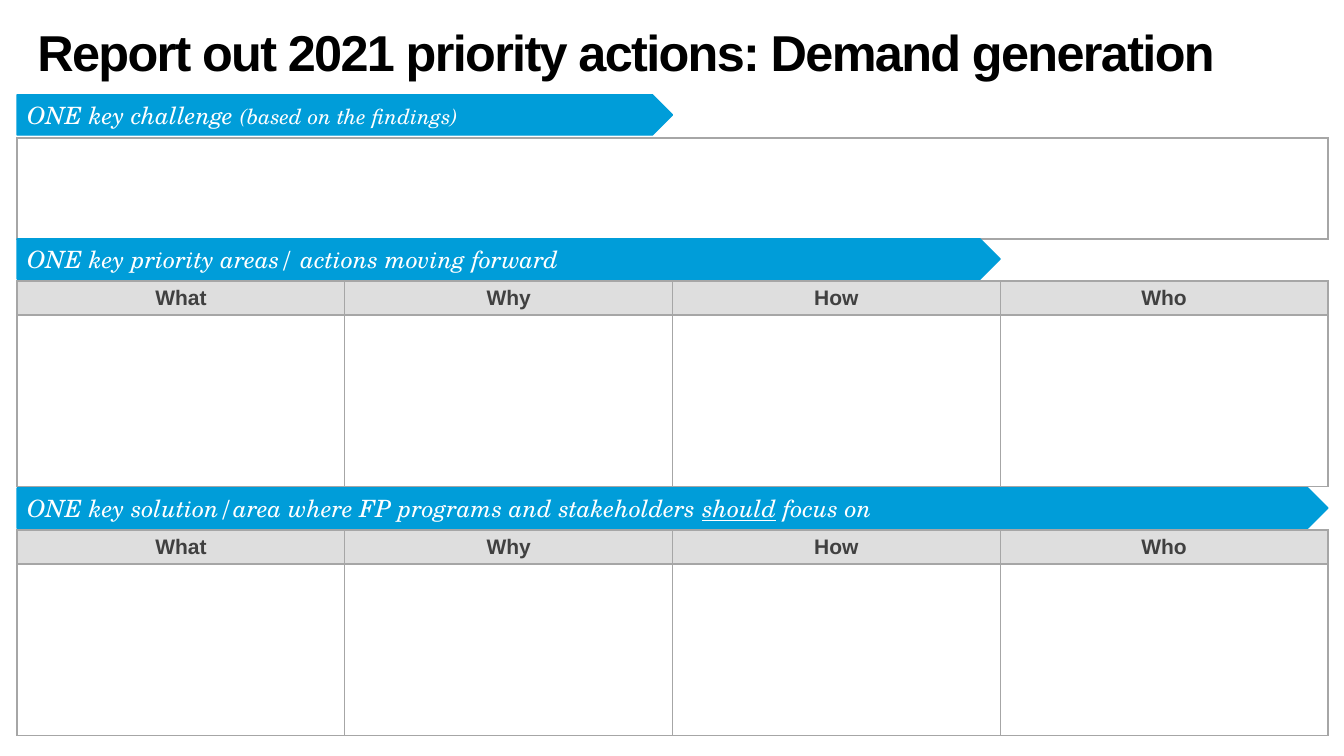
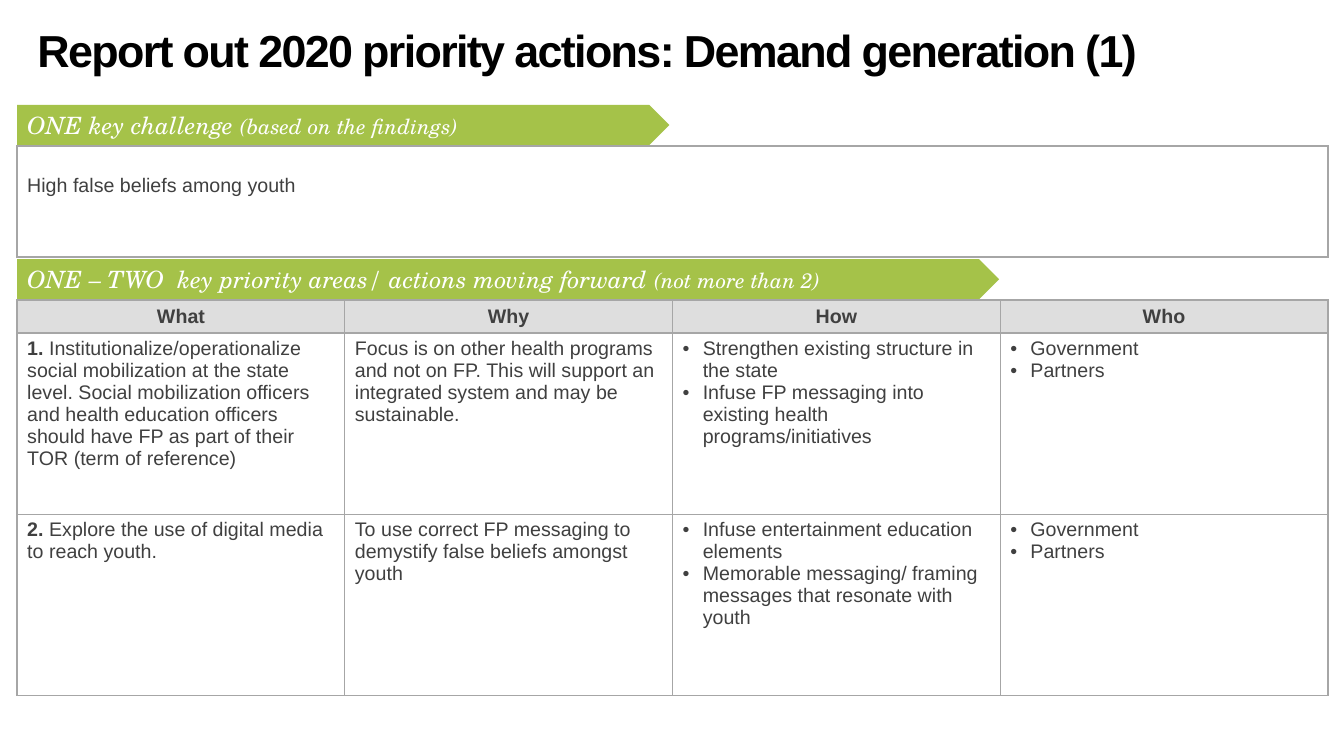
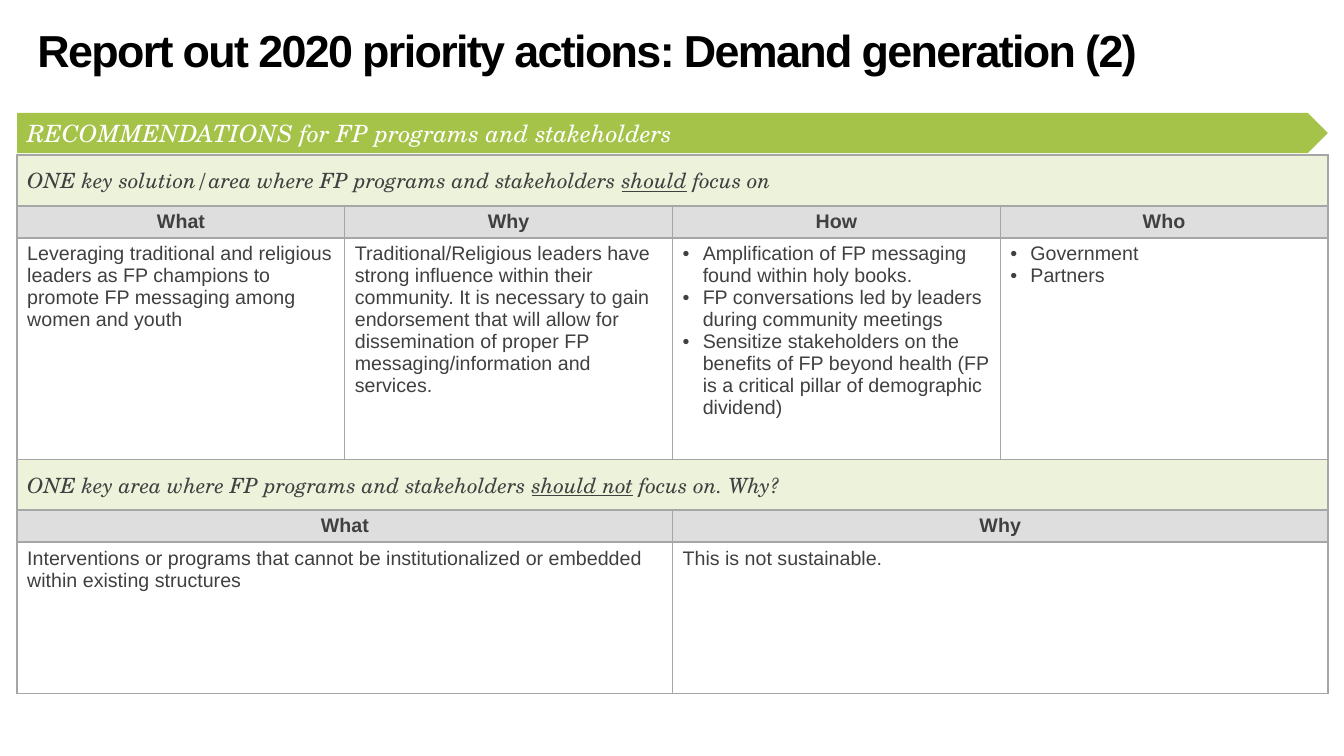
from lxml import etree
from pptx import Presentation
from pptx.dml.color import RGBColor
from pptx.enum.shapes import MSO_SHAPE
from pptx.enum.text import MSO_ANCHOR, MSO_AUTO_SIZE, PP_ALIGN
from pptx.oxml.ns import qn
from pptx.util import Inches, Pt

# Shared look
BLACK = RGBColor(0x00, 0x00, 0x00)
WHITE = RGBColor(0xFF, 0xFF, 0xFF)
DARK = RGBColor(0x40, 0x40, 0x40)
BLUE = RGBColor(0x00, 0x9D, 0xD9)
GREEN = RGBColor(0xA5, 0xC2, 0x49)
PALE_GREEN = RGBColor(0xED, 0xF3, 0xDB)
GREY = RGBColor(0xDE, 0xDE, 0xDE)
EDGE = RGBColor(0xA6, 0xA6, 0xA6)
SANS, SERIF = "Arial", "TeX Gyre Schola"
LEFT, WIDTH, BAND_H = 0.17, 13, 0.4
THICK, THIN = 1.5, 0.75

BANNER = dict(size=Pt(17), name=SERIF, color=WHITE, italic=True)
SUBBAND = dict(size=Pt(15), name=SERIF, color=DARK, italic=True)
BODY = dict(size=Pt(14), name=SANS, color=DARK)
SMALL = dict(size=Pt(15))
UNDER = dict(underline=True)
BOLD = dict(bold=True)

# Wording used more than once
HEADS = ["What", "Why", "How", "Who"]
CHALLENGE = ["ONE key challenge ", ("(based on the findings)", SMALL)]
SOLUTION = ["ONE key solution/area where FP programs and stakeholders ",
            ("should", UNDER), " focus on"]
PARTNERS = ("Government", "Partners")


def write_runs(p, runs, style):
    """Runs are plain strings or (string, changed format) pairs."""
    for run in [runs] if isinstance(runs, str) else runs:
        text, change = (run, {}) if isinstance(run, str) else run
        r = p.add_run()
        r.text = text
        for key, value in {**style, **change}.items():
            if key == "color":
                r.font.color.rgb = value
            else:
                setattr(r.font, key, value)


def add_bullet(p):
    pPr = p._p.get_or_add_pPr()
    pPr.set("marL", str(Inches(0.2)))
    pPr.set("indent", str(-Inches(0.2)))
    etree.SubElement(pPr, qn("a:buFont"), typeface=SANS)
    etree.SubElement(pPr, qn("a:buChar"), char="•")


def set_borders(cell, **weights):
    tcPr = cell._tc.get_or_add_tcPr()
    for side in "LRTB":
        ln = etree.SubElement(tcPr, qn("a:ln" + side), w=str(Pt(weights[side])))
        fill = etree.SubElement(ln, qn("a:solidFill"))
        etree.SubElement(fill, qn("a:srgbClr"), val=str(EDGE))


def add_title_slide(prs, title, size, top, height):
    s = prs.slides.add_slide(prs.slide_layouts[5])
    sp = s.shapes.title
    sp.left, sp.top = Inches(0.27), Inches(top)
    sp.width, sp.height = Inches(12.8), Inches(height)
    tf = sp.text_frame
    tf.auto_size, tf.word_wrap = MSO_AUTO_SIZE.NONE, True
    tf.vertical_anchor = MSO_ANCHOR.TOP
    p = tf.paragraphs[0]
    p.alignment, p.line_spacing = PP_ALIGN.LEFT, 0.9
    write_runs(p, title, dict(size=Pt(size), name=SANS, color=BLACK, bold=True))
    p.runs[0]._r.get_or_add_rPr().set("spc", "-120")
    return s


def add_banner(s, top, width, runs, color, outlined=False):
    sp = s.shapes.add_shape(MSO_SHAPE.PENTAGON, Inches(LEFT), Inches(top),
                            Inches(width), Inches(BAND_H))
    sp.shadow.inherit = False
    sp.fill.solid()
    sp.fill.fore_color.rgb = color
    if outlined:
        sp.line.color.rgb, sp.line.width = color, Pt(1)
    else:
        sp.line.fill.background()
    tf = sp.text_frame
    tf.word_wrap, tf.vertical_anchor = True, MSO_ANCHOR.MIDDLE
    tf.paragraphs[0].alignment = PP_ALIGN.LEFT
    write_runs(tf.paragraphs[0], runs, BANNER)


def fill_cell(cell, kind, content, head_size):
    """A tuple gives bullets, anything else a single paragraph of runs."""
    color = {"band": PALE_GREEN, "head": GREY}.get(kind)
    if color is None:
        cell.fill.background()
    else:
        cell.fill.solid()
        cell.fill.fore_color.rgb = color
        cell.vertical_anchor = MSO_ANCHOR.MIDDLE
    style = {"band": SUBBAND, "body": BODY,
             "head": {**BODY, **BOLD, "size": Pt(head_size)}}[kind]
    bulleted = isinstance(content, tuple)
    tf = cell.text_frame
    for i, runs in enumerate(content if bulleted else [content]):
        p = tf.add_paragraph() if i else tf.paragraphs[0]
        if bulleted:
            add_bullet(p)
        if kind == "head":
            p.alignment = PP_ALIGN.CENTER
        if runs:
            write_runs(p, runs, style)


def add_grid(s, top, rows, cols=4, head_size=14, foot=THICK):
    """Rows are (kind, height, contents); contents share the columns equally."""
    height = sum(row[1] for row in rows)
    table = s.shapes.add_table(len(rows), cols, Inches(LEFT), Inches(top),
                               Inches(WIDTH), Inches(height)).table
    table.first_row = table.horz_banding = False
    for col in table.columns:
        col.width = Inches(WIDTH / cols)
    rules = [THICK] + [THIN if kind == "body" else THICK for kind, _, _ in rows]
    rules[-1] = foot
    for y, (kind, row_height, contents) in enumerate(rows):
        table.rows[y].height = Inches(row_height)
        span = cols // len(contents)
        for i, content in enumerate(contents):
            x = i * span
            cell = table.cell(y, x)
            if span > 1:
                cell.merge(table.cell(y, x + span - 1))
            set_borders(cell, L=THIN if x else THICK,
                        R=THIN if x + span < cols else THICK,
                        T=rules[y], B=rules[y + 1])
            fill_cell(cell, kind, content, head_size)
    return table


def build_blank_form(prs):
    s = add_title_slide(prs, "Report out 2021 priority actions: Demand generation",
                        36, 0.23, 0.65)
    add_grid(s, 1.37, [("body", 1, [""])], cols=1)
    for top in (2.79, 5.26):
        add_grid(s, top, [("head", 0.33, HEADS), ("body", 1.7, [""] * 4)],
                 head_size=15, foot=THIN)
    for top, width, runs in (
            (0.94, 6.5, CHALLENGE),
            (2.37, 9.75, "ONE key priority areas/ actions moving forward"),
            (4.84, WIDTH, SOLUTION)):
        add_banner(s, top, width, runs, BLUE, outlined=True)


def build_priorities(prs):
    s = add_title_slide(prs, "Report out 2020 priority actions: Demand generation (1)",
                        32, 0.24, 0.7)
    add_banner(s, 1.04, 6.47, CHALLENGE, GREEN)
    box = add_grid(s, 1.45, [("body", 1.1, ["High false beliefs among youth"])], cols=1)
    box.cell(0, 0).margin_top = Inches(0.28)
    add_banner(s, 2.57, 9.74,
               ["ONE – TWO  key priority areas/ actions moving forward ",
                ("(not more than 2)", SMALL)], GREEN)
    add_grid(s, 2.98, [
        ("head", 0.32, HEADS),
        ("body", 1.8, [
            [("1.", BOLD), " Institutionalize/operationalize social mobilization at the "
             "state level. Social mobilization officers and health education officers "
             "should have FP as part of their TOR (term of reference)"],
            "Focus is on other health programs and not on FP. This will support an "
            "integrated system and may be sustainable.",
            ("Strengthen existing structure in the state",
             "Infuse FP messaging into existing health programs/initiatives"),
            PARTNERS]),
        ("body", 1.8, [
            [("2. ", BOLD), "Explore the use of digital media to reach youth."],
            "To use correct FP messaging to demystify false beliefs amongst youth",
            ("Infuse entertainment education elements",
             "Memorable messaging/ framing messages that resonate with youth"),
            PARTNERS]),
    ])


def build_recommendations(prs):
    s = add_title_slide(prs, "Report out 2020 priority actions: Demand generation (2)",
                        32, 0.24, 0.7)
    add_banner(s, 1.12, WIDTH, "RECOMMENDATIONS for FP programs and stakeholders", GREEN)
    add_grid(s, 1.54, [
        ("band", 0.5, [SOLUTION]),
        ("head", 0.32, HEADS),
        ("body", 2.2, [
            "Leveraging traditional and religious leaders as FP champions to promote "
            "FP messaging among women and youth",
            "Traditional/Religious leaders have strong influence within their community. "
            "It is necessary to gain endorsement that will allow for dissemination of "
            "proper FP messaging/information and services.",
            ("Amplification of FP messaging found within holy books.",
             "FP conversations led by leaders during community meetings",
             "Sensitize stakeholders on the benefits of FP beyond health (FP is a "
             "critical pillar of demographic dividend)"),
            PARTNERS]),
        ("band", 0.5, [["ONE key area where FP programs and stakeholders ",
                        ("should not", UNDER), " focus on. Why?"]]),
        ("head", 0.32, HEADS[:2]),
        ("body", 1.5, [
            "Interventions or programs that cannot be institutionalized or embedded "
            "within existing structures",
            "This is not sustainable."]),
    ])


def main():
    prs = Presentation()
    prs.slide_width, prs.slide_height = Inches(13.33), Inches(7.5)
    for build in (build_blank_form, build_priorities, build_recommendations):
        build(prs)
    prs.save("out.pptx")


if __name__ == "__main__":
    main()
